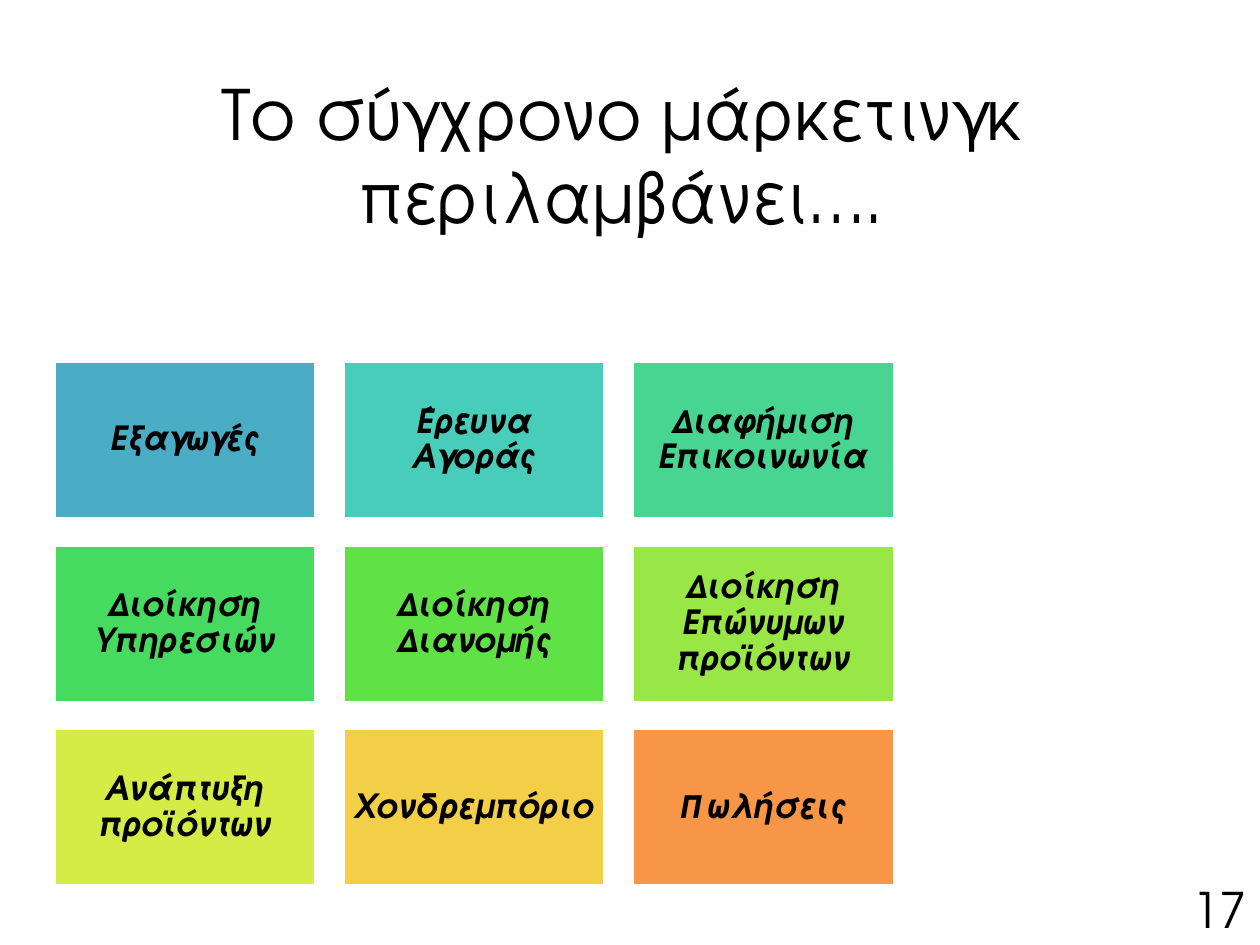
from pptx import Presentation
from pptx.dml.color import RGBColor
from pptx.enum.shapes import MSO_SHAPE as Shape
from pptx.enum.text import MSO_ANCHOR as Anchor, PP_ALIGN as Align
from pptx.util import Cm, Pt

FONT = "TeX Gyre Adventor"
BLACK = RGBColor(0x00, 0x00, 0x00)
WHITE = RGBColor(0xFF, 0xFF, 0xFF)

# Content
TITLE = "Το σύγχρονο μάρκετινγκ περιλαμβάνει…."
PAGE_NUMBER = "17"
ACTIVITIES = [
    ("Εξαγωγές", RGBColor(0x4B, 0xAC, 0xC6)),
    ("Έρευνα Αγοράς", RGBColor(0x49, 0xCD, 0xBB)),
    ("Διαφήμιση Επικοινωνία", RGBColor(0x48, 0xD4, 0x91)),
    ("Διοίκηση Υπηρεσιών", RGBColor(0x47, 0xDA, 0x61)),
    ("Διοίκηση Διανομής", RGBColor(0x60, 0xE1, 0x46)),
    ("Διοίκηση Επώνυμων προϊόντων", RGBColor(0x98, 0xE7, 0x46)),
    ("Ανάπτυξη προϊόντων", RGBColor(0xD5, 0xEC, 0x46)),
    ("Χονδρεμπόριο", RGBColor(0xF2, 0xCF, 0x46)),
    ("Πωλήσεις", RGBColor(0xF7, 0x96, 0x46)),
]

# Grid, in centimetres
COLUMNS = 3
LEFT, TOP = 1.09, 7.29
TILE_W, TILE_H, GAP = 5.28, 3.17, 0.53


def write(sp, text, size, bold=False, italic=False, spacing=1.0,
          anchor=Anchor.MIDDLE, wrap=True, inset=None):
    tf = sp.text_frame
    tf.word_wrap = wrap
    tf.vertical_anchor = anchor
    if inset is not None:
        tf.margin_left = tf.margin_right = Cm(inset)
        tf.margin_top = tf.margin_bottom = Cm(inset)
    p = tf.paragraphs[0]
    p.alignment = Align.CENTER
    p.line_spacing = spacing
    r = p.add_run()
    r.text = text
    r.font.name = FONT
    r.font.size = Pt(size)
    r.font.bold = bold
    r.font.italic = italic
    r.font.color.rgb = BLACK


prs = Presentation()
prs.slide_width, prs.slide_height = Cm(25.4), Cm(19.05)
s = prs.slides.add_slide(prs.slide_layouts[6])

# Title
title = s.shapes.add_textbox(Cm(1.09), Cm(1.52), Cm(22.86), Cm(3.17))
write(title, TITLE, 39.6)

# Activity tiles
for i, (label, color) in enumerate(ACTIVITIES):
    row, col = divmod(i, COLUMNS)
    tile = s.shapes.add_shape(
        Shape.RECTANGLE,
        Cm(LEFT + col * (TILE_W + GAP + 0.02)), Cm(TOP + row * (TILE_H + GAP)),
        Cm(TILE_W), Cm(TILE_H))
    tile.shadow.inherit = False
    tile.fill.solid()
    tile.fill.fore_color.rgb = color
    tile.line.color.rgb = WHITE
    tile.line.width = Pt(2)
    write(tile, label, 19, bold=True, italic=True, spacing=0.9, inset=0.2)

# Page number
number = s.shapes.add_textbox(Cm(23.77), Cm(17.73), Cm(1.63), Cm(1.32))
write(number, PAGE_NUMBER, 28, spacing=0.9, anchor=Anchor.TOP, wrap=False)

prs.save("out.pptx")
